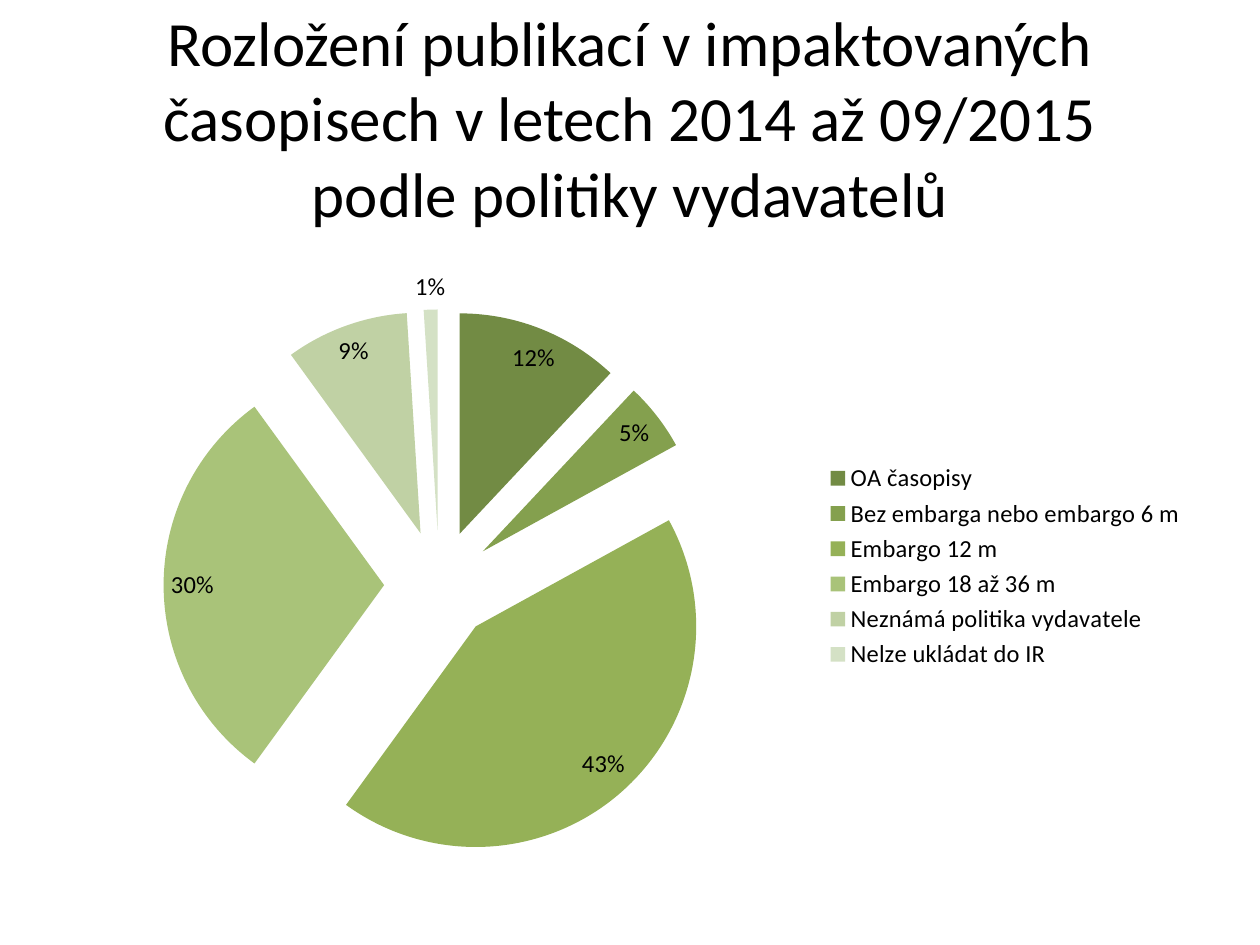
from lxml import etree
from pptx import Presentation
from pptx.chart.data import CategoryChartData
from pptx.dml.color import RGBColor
from pptx.enum import chart as ch, text
from pptx.oxml.ns import qn
from pptx.util import Inches, Pt

FONT = "Calibri"
BLACK = "000000"
TITLE_LINES = [
    "Rozložení publikací v impaktovaných časopisech v letech 2014 až 09/2015",
    "podle politiky vydavatelů",
]
POLICIES = [  # label, share in percent, colour
    ("OA časopisy", 12, "728B44"),
    ("Bez embarga nebo embargo 6 m", 5, "84A04E"),
    ("Embargo 12 m", 43, "95B157"),
    ("Embargo 18 až 36 m", 30, "A9C379"),
    ("Neznámá politika vydavatele", 9, "C0D1A4"),
    ("Nelze ukládat do IR", 1, "D4E1C5"),
]
EXPLOSION = 25


def set_font(font, size):
    font.name = FONT
    font.size = Pt(size)
    font.color.rgb = RGBColor.from_string(BLACK)


def explode(series, percent):
    """Pull all slices out from the centre; the element must precede c:dPt."""
    explosion = etree.Element(qn("c:explosion"), val=str(percent))
    series._element.find(qn("c:dPt")).addprevious(explosion)


def add_title(slide):
    title = slide.shapes.title
    title.left, title.top = Inches(0.5), Inches(0.3)
    title.width, title.height = Inches(9), Inches(1.25)
    frame = title.text_frame
    frame.word_wrap = True
    frame.auto_size = text.MSO_AUTO_SIZE.NONE
    frame.vertical_anchor = text.MSO_ANCHOR.MIDDLE
    paragraph = frame.paragraphs[0]
    paragraph.alignment = text.PP_ALIGN.CENTER
    for index, line in enumerate(TITLE_LINES):
        if index:
            paragraph.add_line_break()
        run = paragraph.add_run()
        run.text = line
        set_font(run.font, 36)


def add_policy_chart(slide):
    labels, shares, colours = zip(*POLICIES)
    data = CategoryChartData()
    data.categories = labels
    data.add_series("Series 1", shares)
    chart = slide.shapes.add_chart(
        ch.XL_CHART_TYPE.PIE, Inches(0.51), Inches(2.02), Inches(9), Inches(4.95), data
    ).chart
    set_font(chart.font, 10)
    chart.has_title = False
    chart.has_legend = True
    chart.legend.position = ch.XL_LEGEND_POSITION.RIGHT
    chart.legend.include_in_layout = False
    set_font(chart.legend.font, 14)

    plot = chart.plots[0]
    plot.vary_by_categories = True
    series = plot.series[0]
    for index, colour in enumerate(colours):
        fill = series.points[index].format.fill
        fill.solid()
        fill.fore_color.rgb = RGBColor.from_string(colour)
    explode(series, EXPLOSION)

    data_labels = series.data_labels
    data_labels.show_percentage = True
    data_labels.show_value = False
    data_labels.number_format = "0%"
    data_labels.number_format_is_linked = False
    data_labels.position = ch.XL_LABEL_POSITION.BEST_FIT
    set_font(data_labels.font, 14)


def main():
    presentation = Presentation()
    presentation.slide_width, presentation.slide_height = Inches(10), Inches(7.5)
    slide = presentation.slides.add_slide(presentation.slide_layouts[5])
    add_title(slide)
    add_policy_chart(slide)
    presentation.save("out.pptx")


if __name__ == "__main__":
    main()
